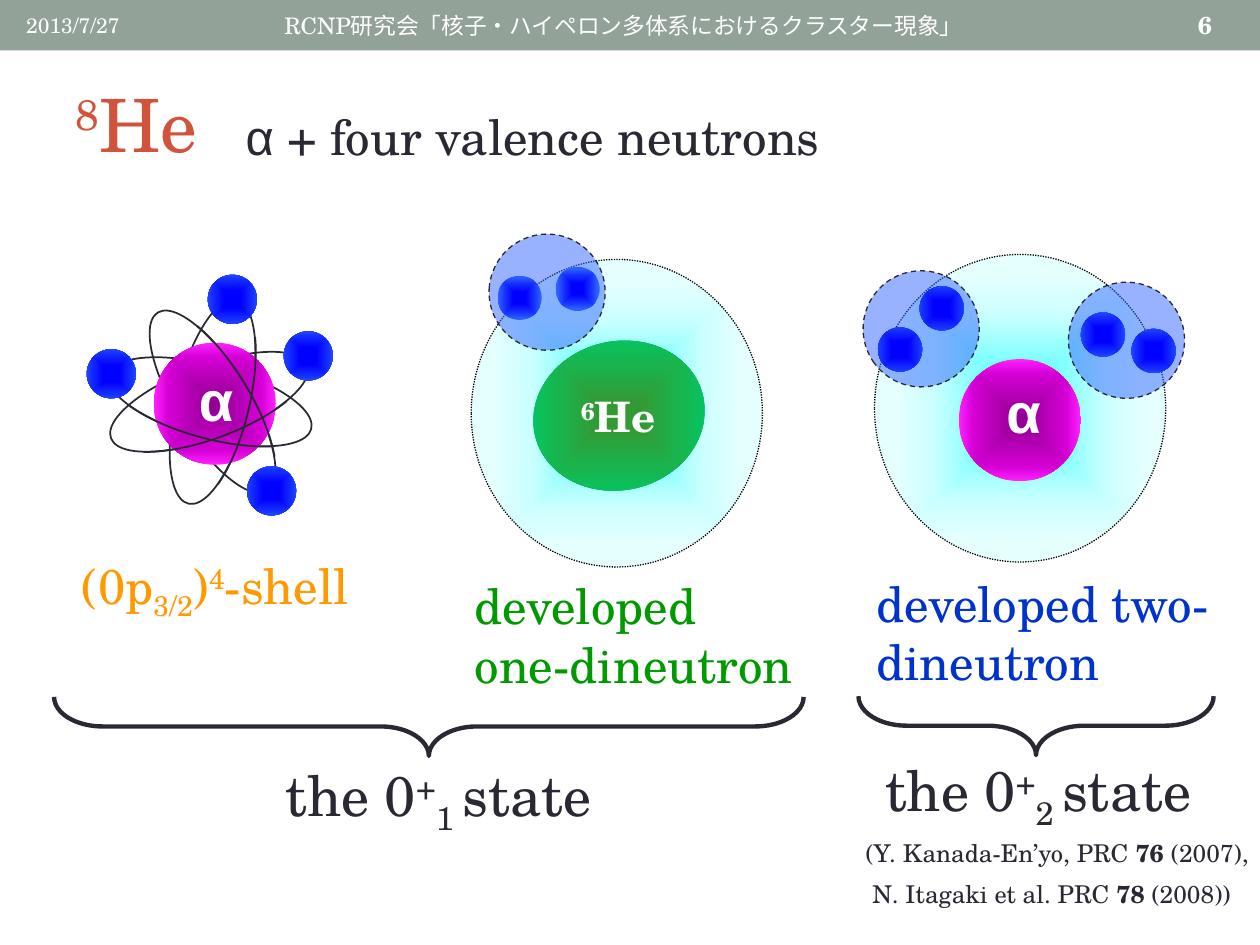
import math
from dataclasses import dataclass
from typing import NamedTuple

from pptx import Presentation, util as u
from pptx.dml.color import RGBColor
from pptx.enum import dml, shapes, text
from pptx.oxml import parse_xml
from pptx.oxml.ns import nsdecls, qn

SERIF, SANS = "TeX Gyre Schola", "Arial"
INK, WHITE, BLACK = "292934", "FFFFFF", "000000"
SUP, SUB = 30, -25
MID = text.MSO_ANCHOR.MIDDLE
OVAL = shapes.MSO_SHAPE.OVAL

Stops = tuple[tuple[int, str], ...]
BLUE: Stops = ((25, "0000FF"), (59, "152DFF"), (91, "2D61FF"))
PINK: Stops = ((0, "8F008F"), (76, "D500D5"), (100, "FF21FF"))
CYAN: Stops = ((26, "7BFFFF"), (60, "CCFFFF"), (86, "E5FFFF"))
GREEN: Stops = ((13, "339933"), (54, "1AB34D"), (92, "00C864"))


class Box(NamedTuple):
    x: float
    y: float
    w: float
    h: float


class Span(NamedTuple):
    words: str
    base: int = 0
    bold: bool = False
    face: str = ""


@dataclass
class Label:
    box: Box
    lines: list[list[Span]]
    size: int
    color: str = INK
    face: str = SERIF
    bold: bool = False
    gap: float = 0
    mid: bool = False
    center: bool = False


class Orbit(NamedTuple):
    x: float
    y: float
    turn: float


class Ball(NamedTuple):
    x: float
    y: float
    turn: float = 0


def paint(target, code: str) -> None:
    target.rgb = RGBColor.from_string(code)


def stroke(shape, code: str, width: float, dash=None) -> None:
    paint(shape.line.color, code)
    shape.line.width = u.Pt(width)
    if dash:
        shape.line.dash_style = dash


def form(slide, kind, box: Box, turn: float = 0):
    shape = slide.shapes.add_shape(kind, *map(u.Cm, box))
    shape.rotation = turn
    shape.shadow.inherit = False
    shape.fill.background()
    shape.line.fill.background()
    return shape


def glow(shape, stops: Stops) -> None:
    marks = "".join(
        f'<a:gs pos="{pos * 1000}"><a:srgbClr val="{code}"/></a:gs>' for pos, code in stops
    )
    props = shape.element.spPr
    props.replace(props.find(qn("a:noFill")), parse_xml(
        f'<a:gradFill {nsdecls("a")} rotWithShape="1"><a:gsLst>{marks}</a:gsLst>'
        '<a:path path="shape"><a:fillToRect l="50000" t="50000" r="50000" b="50000"/>'
        "</a:path></a:gradFill>"
    ))


def ball(slide, at: Ball, size: float, stops: Stops) -> None:
    glow(form(slide, OVAL, Box(at.x, at.y, size, size), at.turn), stops)


def halo(slide, x: float, y: float) -> None:
    shape = form(slide, OVAL, Box(x, y, 5.87, 6.2))
    glow(shape, CYAN)
    stroke(shape, BLACK, 0.75, dml.MSO_LINE.ROUND_DOT)


def pair(slide, at: Ball, balls: list[Ball]) -> None:
    shape = form(slide, OVAL, Box(at.x, at.y, 2.34, 2.34), at.turn)
    shape.fill.solid()
    paint(shape.fill.fore_color, "3366FF")
    tint = shape.element.spPr.find(qn("a:solidFill"))[0]
    tint.append(parse_xml(f'<a:alpha {nsdecls("a")} val="50000"/>'))
    stroke(shape, INK, 0.75, dml.MSO_LINE.DASH)
    for item in balls:
        ball(slide, item, 0.89, BLUE)


def ring(slide, orbit: Orbit) -> None:
    box = Box(orbit.x - 0.74, orbit.y - 2.11, 1.47, 4.22)
    stroke(form(slide, OVAL, box, orbit.turn), INK, 1)


def arc(slide, orbit: Orbit) -> None:
    turn = math.radians(orbit.turn)
    points = []
    for step in range(-44, 50, 3):
        angle = math.radians(step)
        x, y = 0.74 * math.cos(angle), 2.11 * math.sin(angle)
        points.append((
            u.Cm(orbit.x + x * math.cos(turn) - y * math.sin(turn)),
            u.Cm(orbit.y + x * math.sin(turn) + y * math.cos(turn)),
        ))
    pen = slide.shapes.build_freeform(*points[0])
    pen.add_line_segments(points[1:], close=False)
    shape = pen.convert_to_shape()
    shape.shadow.inherit = False
    shape.fill.background()
    stroke(shape, INK, 1)


def brace(slide, box: Box) -> None:
    shape = form(slide, shapes.MSO_SHAPE.RIGHT_BRACE, box, 90)
    shape.adjustments[0] = 0.821
    shape.adjustments[1] = 0.5
    stroke(shape, INK, 2.5)


def write(slide, label: Label) -> None:
    frame = slide.shapes.add_textbox(*map(u.Cm, label.box)).text_frame
    frame.word_wrap = True
    if label.mid:
        frame.vertical_anchor = MID
    for row, spans in enumerate(label.lines):
        para = frame.add_paragraph() if row else frame.paragraphs[0]
        font = para.font
        font.name, font.size, font.bold = label.face, u.Pt(label.size), label.bold
        paint(font.color, label.color)
        para.space_before = u.Pt(label.gap)
        if label.center:
            para.alignment = text.PP_ALIGN.CENTER
        for span in spans:
            run = para.add_run()
            run.text = span.words
            if span.base:
                run.font._element.set("baseline", str(span.base * 1000))
            if span.bold:
                run.font.bold = True
            if span.face:
                run.font.name = span.face


def alpha(slide, at: Ball, x: float, y: float) -> None:
    ball(slide, at, 2.46, PINK)
    write(slide, Label(Box(x, y, 1.4, 1.63), [[Span("α")]], 32, WHITE, SANS, True, 16))


def state(slide, box: Box, level: str) -> None:
    spans = [Span("the 0"), Span("+", SUP), Span(f"{level} ", SUB), Span("state")]
    write(slide, Label(box, [spans], 32))


def head(slide) -> None:
    bar = form(slide, shapes.MSO_SHAPE.RECTANGLE, Box(0, 0, 25.4, 1.02))
    bar.fill.solid()
    paint(bar.fill.fore_color, "93A299")
    for label in (
        Label(Box(1.27, 1.12, 22.86, 2.74), [[Span("8", SUP), Span("He")]], 42, "D2533C", mid=True),
        Label(Box(0.28, 0.05, 3.33, 0.91), [[Span("2013/7/27")]], 12, WHITE, mid=True),
        Label(Box(5.11, 0.05, 14.91, 0.91),
              [[Span("RCNP研究会「核子・ハイペロン多体系におけるクラスター現象」")]],
              13, WHITE, mid=True, center=True),
        Label(Box(23.9, 0.05, 1.14, 0.91), [[Span("6")]], 14, WHITE, bold=True, mid=True),
        Label(Box(4.7, 2.03, 13.51, 1.45),
              [[Span("α", face=SANS), Span(" + four valence neutrons")]], 28, gap=14),
    ):
        write(slide, label)


def shell(slide) -> None:
    orbits = [Orbit(4.29, 8.1, 328.5), Orbit(4.29, 8.1, 13.3),
              Orbit(4.24, 8.1, 105.1), Orbit(4.22, 8.1, 69.6)]
    for orbit in orbits:
        ring(slide, orbit)
    alpha(slide, Ball(3.1, 6.91), 3.76, 7.24)
    for orbit in orbits:
        arc(slide, orbit)
    for x, y in ((4.19, 5.54), (4.98, 9.4), (1.75, 7.04), (5.72, 6.68)):
        ball(slide, Ball(x, y, 332.5), 0.99, BLUE)
    spans = [Span("(0p"), Span("3/2", SUB), Span(")"), Span("4", SUP), Span("-shell")]
    write(slide, Label(Box(1.4, 11.07, 6.2, 1.45), [spans], 28, "FF9900"))


def single(slide) -> None:
    halo(slide, 9.5, 5.23)
    glow(form(slide, OVAL, Box(10.74, 6.88, 3.48, 3), 346.6), GREEN)
    write(slide, Label(Box(11.46, 7.75, 2.26, 1.27), [[Span("6", SUP), Span("He")]],
                       24, WHITE, bold=True, gap=12))
    pair(slide, Ball(9.86, 4.72, 3.7), [Ball(10.03, 5.56, 356.7), Ball(11.2, 5.38)])
    write(slide, Label(Box(9.32, 11.48, 7.06, 2.64),
                       [[Span("developed one-dineutron")]], 28, "009900"))


def double(slide) -> None:
    halo(slide, 17.63, 5.13)
    alpha(slide, Ball(19.33, 7.24), 20.04, 7.49)
    pair(slide, Ball(17.4, 5.46, 324.1), [Ball(17.7, 6.6, 317.1), Ball(18.54, 5.77, 320.4)])
    pair(slide, Ball(21.54, 5.69, 30.8), [Ball(21.79, 6.3, 23.8), Ball(22.81, 6.63, 27)])
    write(slide, Label(Box(17.42, 11.43, 7.24, 2.64),
                       [[Span("developed two-dineutron")]], 28, "0033CC"))


def foot(slide) -> None:
    brace(slide, Box(8.05, 7.09, 1.19, 15.11))
    state(slide, Box(5.51, 15.21, 8.59, 1.63), "1")
    brace(slide, Box(20.29, 11.05, 1.19, 7.16))
    write(slide, Label(Box(17.2, 16.76, 9.07, 1.75), [
        [Span("(Y. Kanada-En’yo, PRC "), Span("76 ", bold=True), Span("(2007),")],
        [Span(" N. Itagaki et al. PRC "), Span("78", bold=True), Span(" (2008))")],
    ], 14, gap=7))
    state(slide, Box(17.6, 15.11, 7.49, 1.63), "2")


def main() -> None:
    deck = Presentation()
    deck.slide_width, deck.slide_height = u.Cm(25.4), u.Cm(19.05)
    slide = deck.slides.add_slide(deck.slide_layouts[6])
    for part in (head, shell, single, double, foot):
        part(slide)
    deck.save("out.pptx")


if __name__ == "__main__":
    main()
